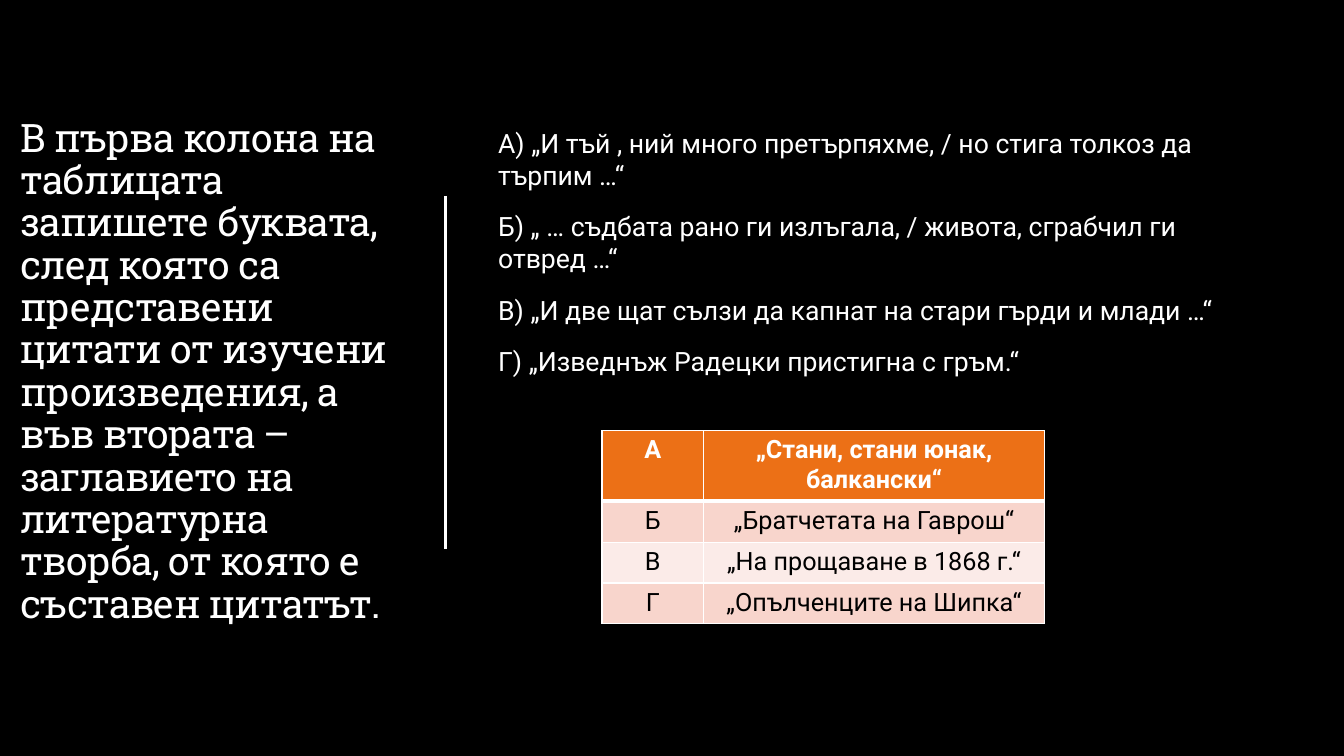
from lxml import etree
from pptx import Presentation
from pptx.dml.color import RGBColor
from pptx.enum import shapes, text
from pptx.oxml import ns
from pptx.util import Pt

COLORS = {"black": "000000", "white": "FFFFFF", "orange": "EC7016",
          "rose": "F8D5CC", "pale": "FBEBE8"}
TASK = ("В първа колона на таблицата запишете буквата, след която са представени "
        "цитати от изучени произведения, а във втората – заглавието на литературна "
        "творба, от която е съставен цитатът.")
QUOTES = ["А) „И тъй , ний много претърпяхме, / но стига толкоз да търпим …“",
          "Б) „ … съдбата рано ги излъгала, / живота, сграбчил ги отвред …“",
          "В) „И две щат сълзи да капнат на стари гърди и млади …“",
          "Г) „Изведнъж Радецки пристигна с гръм.“"]
ANSWERS = [("А", "„Стани, стани юнак, балкански“"),
           ("Б", "„Братчетата на Гаврош“"),
           ("В", "„На прощаване в 1868 г.“"),
           ("Г", "„Опълченците на Шипка“")]


def rgb(name):
    return RGBColor.from_string(COLORS[name])


def apply(target, **values):
    for name, value in values.items():
        setattr(target, name, value)


def paint(fill, color):
    fill.solid()
    fill.fore_color.rgb = rgb(color)


def write(para, words, color, font, **para_format):
    apply(para, **para_format)
    span = para.add_run()
    span.text = words
    apply(span.font, **font)
    span.font.color.rgb = rgb(color)
    return span


def add_panel(page, frame, color):
    panel = page.shapes.add_shape(shapes.MSO_SHAPE.RECTANGLE, *map(Pt, frame))
    panel.shadow.inherit = False
    paint(panel.fill, color)
    panel.line.fill.background()


def add_text(page, frame, paragraphs, font, frame_format, para_format):
    """Add a wrapped white text box and return its spans."""
    box = page.shapes.add_textbox(*map(Pt, frame)).text_frame
    apply(box, word_wrap=True, **frame_format)
    spans = []
    for index, words in enumerate(paragraphs):
        para = box.add_paragraph() if index else box.paragraphs[0]
        spans.append(write(para, words, "white", font, **para_format))
    return spans


def add_divider(page, x, top, bottom):
    line = page.shapes.add_connector(shapes.MSO_CONNECTOR.STRAIGHT,
                                     Pt(x), Pt(top), Pt(x), Pt(bottom))
    line.line.color.rgb = rgb("white")
    line.line.width = Pt(1.5)
    etree.SubElement(line._element.spPr, ns.qn("a:effectLst"))


def set_borders(cell, widths):
    """Draw white borders; they must precede the fill in the cell properties."""
    props = cell._tc.get_or_add_tcPr()
    for index, (side, width) in enumerate(widths.items()):
        border = etree.Element(ns.qn(f"a:ln{side}"), w=str(Pt(width)))
        fill = etree.SubElement(border, ns.qn("a:solidFill"))
        etree.SubElement(fill, ns.qn("a:srgbClr"), val=COLORS["white"])
        props.insert(index, border)


def add_answers(page, left, top, widths, heights):
    table = page.shapes.add_table(len(heights), len(widths), Pt(left), Pt(top),
                                  Pt(sum(widths)), Pt(sum(heights))).table
    for column, width in zip(table.columns, widths):
        column.width = Pt(width)
    for r, (row, height, answer) in enumerate(zip(table.rows, heights, ANSWERS)):
        row.height = Pt(height)
        header = r == 0
        fill = "orange" if header else ("rose" if r % 2 else "pale")
        for cell, words in zip(row.cells, answer):
            paint(cell.fill, fill)
            set_borders(cell, {"L": 1, "R": 1, "T": 3 if r == 1 else 1,
                               "B": 3 if header else 1})
            write(cell.text_frame.paragraphs[0], words,
                  "white" if header else "black",
                  {"name": "Roboto", "size": Pt(18), "bold": header},
                  alignment=text.PP_ALIGN.CENTER)


def main():
    deck = Presentation()
    apply(deck, slide_width=Pt(960), slide_height=Pt(540))
    page = deck.slides.add_slide(deck.slide_layouts[6])
    paint(page.background.fill, "black")
    add_panel(page, (0, 0, 960, 540), "black")

    title = add_text(page, (7.6, 50.7, 285.8, 430.6), [TASK],
                     {"name": "Roboto Slab", "size": Pt(28)},
                     {"vertical_anchor": text.MSO_ANCHOR.MIDDLE},
                     {"line_spacing": 0.9})
    title[0].font._element.set("spc", "-50")
    add_divider(page, 318.2, 140, 392)
    add_text(page, (348.8, 50.4, 537.1, 430.6), QUOTES,
             {"name": "Roboto", "size": Pt(19)},
             {"margin_left": Pt(7.2), "margin_right": 0, "margin_top": Pt(40.3)},
             {"space_before": Pt(12), "space_after": Pt(2)})
    add_answers(page, 430, 307.6, (72.7, 243.4), (48.8, 29.2, 29.2, 29.2))
    deck.save("out.pptx")


if __name__ == "__main__":
    main()
